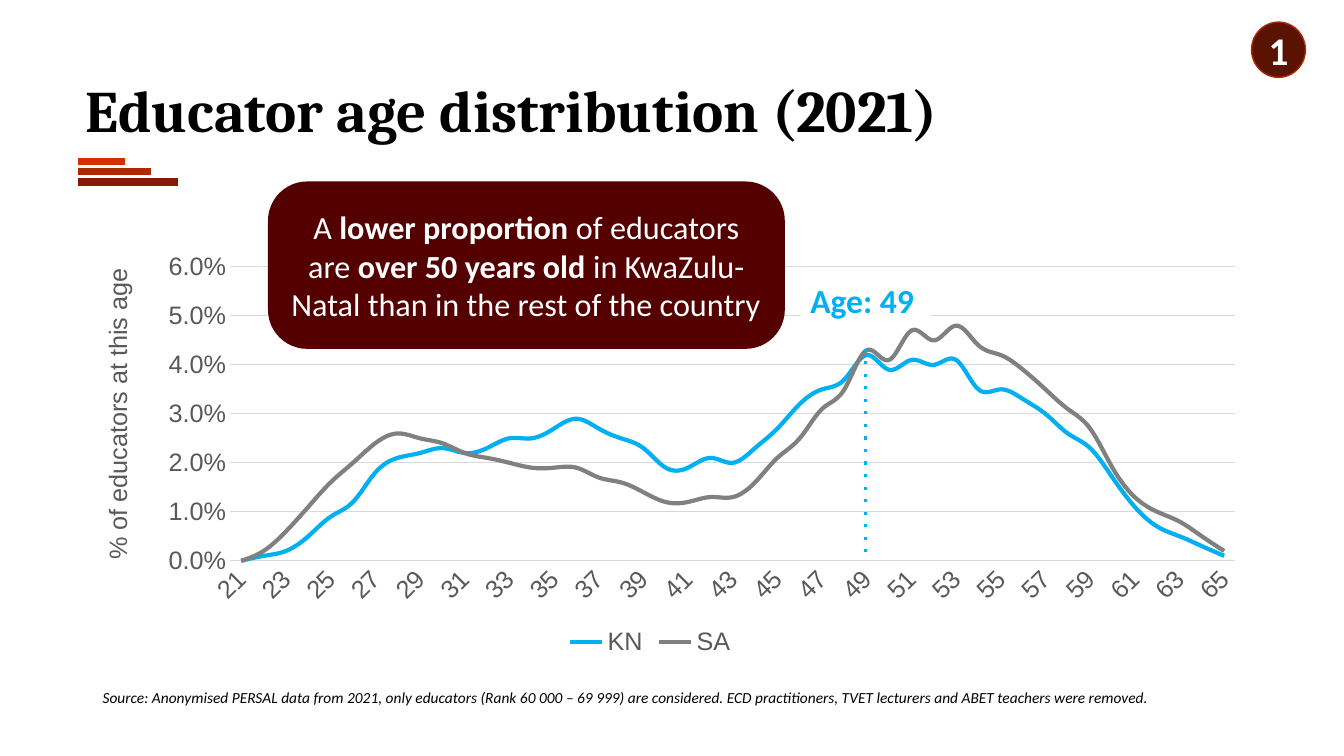
from lxml.etree import SubElement
from pptx import Presentation
from pptx.chart.data import CategoryChartData
from pptx.dml.color import RGBColor
from pptx.enum.chart import XL_CHART_TYPE, XL_LEGEND_POSITION, XL_TICK_MARK
from pptx.enum.shapes import MSO_CONNECTOR, MSO_SHAPE
from pptx.enum.text import MSO_ANCHOR, PP_ALIGN
from pptx.oxml import parse_xml
from pptx.oxml.ns import nsdecls, qn
from pptx.util import Pt

# Content
TITLE = "Educator age distribution (2021)"
SOURCE = ("Source: Anonymised PERSAL data from 2021, only educators (Rank 60 000 – 69 999) are considered. "
          "ECD practitioners, TVET lecturers and ABET teachers were removed.")
MESSAGE = [("A ", False), ("lower proportion ", True), ("of educators are ", False),
           ("over 50 years old ", True), ("in KwaZulu-Natal than in the rest of the country", False)]
AGES = range(21, 66)
# Share of educators at each age, in percent
SERIES = [
    ("KN", "00B0F0", [0, 0.1, 0.2, 0.5, 0.9, 1.2, 1.8, 2.1, 2.2, 2.3, 2.2, 2.3, 2.5, 2.5, 2.7,
                      2.9, 2.7, 2.5, 2.3, 1.9, 1.9, 2.1, 2.0, 2.3, 2.7, 3.2, 3.5, 3.7, 4.2, 3.9,
                      4.1, 4.0, 4.1, 3.5, 3.5, 3.3, 3.0, 2.6, 2.3, 1.7, 1.1, 0.7, 0.5, 0.3, 0.1]),
    ("SA", "808080", [0, 0.2, 0.6, 1.1, 1.6, 2.0, 2.4, 2.6, 2.5, 2.4, 2.2, 2.1, 2.0, 1.9, 1.9,
                      1.9, 1.7, 1.6, 1.4, 1.2, 1.2, 1.3, 1.3, 1.6, 2.1, 2.5, 3.1, 3.5, 4.3, 4.1,
                      4.7, 4.5, 4.8, 4.4, 4.2, 3.9, 3.5, 3.1, 2.7, 1.9, 1.3, 1.0, 0.8, 0.5, 0.2]),
]
BARS = [("851C00", 72), ("B22600", 52.5), ("D62E00", 34)]  # colour, length
BLUE, GREY, RULE, WHITE, BLACK = "00B0F0", "595959", "D9D9D9", "FFFFFF", "000000"


def color(hex_code):
    return RGBColor.from_string(hex_code)


def set_font(font, name, size, hex_code, bold=False, italic=False):
    font.name, font.size, font.bold, font.italic = name, Pt(size), bold, italic
    font.color.rgb = color(hex_code)


def set_line(line, hex_code, width):
    line.color.rgb = color(hex_code)
    line.width = Pt(width)


def add_line(page, x1, y1, x2, y2, hex_code, width):
    line = page.shapes.add_connector(MSO_CONNECTOR.STRAIGHT, Pt(x1), Pt(y1), Pt(x2), Pt(y2))
    set_line(line.line, hex_code, width)
    SubElement(line._element.spPr, qn("a:effectLst"))
    return line


def add_box(page, kind, place, fill, outline=None):
    box = page.shapes.add_shape(kind, *[Pt(value) for value in place])
    box.shadow.inherit = False
    box.fill.solid()
    box.fill.fore_color.rgb = color(fill)
    if outline:
        set_line(box.line, outline, 1)
    else:
        box.line.fill.background()
    box.text_frame.word_wrap = True
    return box


def write(box, text, size, hex_code, align, anchor, bold=False, italic=False):
    box.text_frame.vertical_anchor = anchor
    para = box.text_frame.paragraphs[0]
    para.text, para.alignment = text, align
    set_font(para.font, "Calibri", size, hex_code, bold, italic)
    return para


def set_layout(parent, index, tags):
    """Give a chart part a manual layout."""
    for old in parent.findall(qn("c:layout")):
        parent.remove(old)
    inner = "".join(f'<c:{tag} val="{value}"/>' for tag, value in tags)
    parent.insert(index, parse_xml(f'<c:layout {nsdecls("c")}><c:manualLayout>{inner}'
                                   '</c:manualLayout></c:layout>'))


def add_age_chart(page):
    data = CategoryChartData(number_format="0.0%")
    data.categories = [str(age) for age in AGES]
    for name, _, percents in SERIES:
        data.add_series(name, [round(percent / 100, 3) for percent in percents])
    chart = page.shapes.add_chart(XL_CHART_TYPE.LINE, Pt(34.5), Pt(149.75), Pt(860), Pt(322.5), data).chart
    set_font(chart.font, "Arial", 18, GREY)
    chart.has_title = False
    chart.has_legend = True
    chart.legend.position = XL_LEGEND_POSITION.BOTTOM
    chart.legend.include_in_layout = False
    chart.plots[0].vary_by_categories = False
    for series, (_, hex_code, _) in zip(chart.plots[0].series, SERIES):
        series.smooth = True
        set_line(series.format.line, hex_code, 3)

    # Axes
    ages, shares = chart.category_axis, chart.value_axis
    for axis in (ages, shares):
        axis.major_tick_mark = axis.minor_tick_mark = XL_TICK_MARK.NONE
        set_font(axis.tick_labels.font, "Arial", 18, GREY)
    set_line(ages.format.line, RULE, 0.75)
    ages._element.find(qn("c:txPr")).find(qn("a:bodyPr")).set("rot", "-2700000")
    skip = parse_xml(f'<c:tickLblSkip {nsdecls("c")} val="2"/>')
    ages._element.find(qn("c:noMultiLvlLbl")).addprevious(skip)
    shares.minimum_scale, shares.maximum_scale, shares.major_unit = 0, 0.06, 0.01
    shares.tick_labels.number_format = "0.0%"
    shares.tick_labels.number_format_is_linked = False
    shares.format.line.fill.background()
    set_line(shares.major_gridlines.format.line, RULE, 0.75)
    frame = shares.axis_title.text_frame
    frame.text = "% of educators at this age"
    set_font(frame.paragraphs[0].font, "Arial", 18, GREY)
    frame._txBody.find(qn("a:bodyPr")).set("rot", "-5400000")
    set_layout(shares.axis_title._element, 1,
               [("xMode", "edge"), ("yMode", "edge"), ("x", 0.04), ("y", 0.12)])
    set_layout(chart._chartSpace.chart.plotArea, 0,
               [("layoutTarget", "inner"), ("xMode", "edge"), ("yMode", "edge"),
                ("x", 0.151), ("y", 0.127), ("w", 0.835), ("h", 0.651)])


def main():
    deck = Presentation()
    deck.slide_width, deck.slide_height = Pt(960), Pt(540)
    page = deck.slides.add_slide(deck.slide_layouts[5])

    # Stepped bars under the title
    for step, (hex_code, length) in enumerate(BARS):
        y = 129.8 - 7.2 * step
        add_line(page, 55.4, y, 55.4 + length, y, hex_code, 5.5)

    # Title
    title = page.shapes.title
    title.left, title.top, title.width, title.height = Pt(54), Pt(28.8), Pt(840), Pt(104.4)
    title.text_frame.vertical_anchor = MSO_ANCHOR.MIDDLE
    para = title.text_frame.paragraphs[0]
    para.text, para.alignment, para.line_spacing = TITLE, PP_ALIGN.LEFT, 0.9
    set_font(para.font, "Cambria", 42, BLACK, bold=True)

    add_age_chart(page)

    # Page badge
    badge = add_box(page, MSO_SHAPE.OVAL, (894, 15.8, 38.5, 39.5), "591300", "B22600")
    badge.text_frame.word_wrap = False
    write(badge, "1", 28, WHITE, PP_ALIGN.CENTER, MSO_ANCHOR.MIDDLE, bold=True)

    # Source note
    note = page.shapes.add_textbox(Pt(66.2), Pt(484.6), Pt(828), Pt(26.6))
    note.text_frame.word_wrap = True
    write(note, SOURCE, 11, BLACK, PP_ALIGN.LEFT, MSO_ANCHOR.MIDDLE, italic=True)

    # Marker at age 49
    marker = add_line(page, 618.3, 249, 618.3, 399.6, BLUE, 2.25)
    SubElement(marker.line._ln, qn("a:prstDash")).set("val", "dot")
    label = add_box(page, MSO_SHAPE.RECTANGLE, (571.7, 196.6, 92.9, 33), WHITE)
    write(label, "Age: 49", 24, BLUE, PP_ALIGN.LEFT, MSO_ANCHOR.TOP, bold=True)

    # Key message
    callout = add_box(page, MSO_SHAPE.ROUNDED_RECTANGLE, (191.4, 129.6, 369.2, 119.6), "550000")
    callout.adjustments[0] = 0.235
    para = write(callout, "", 23, WHITE, PP_ALIGN.CENTER, MSO_ANCHOR.MIDDLE)
    for text, bold in MESSAGE:
        span = para.add_run()
        span.text, span.font.bold = text, bold

    deck.save("out.pptx")


if __name__ == "__main__":
    main()
